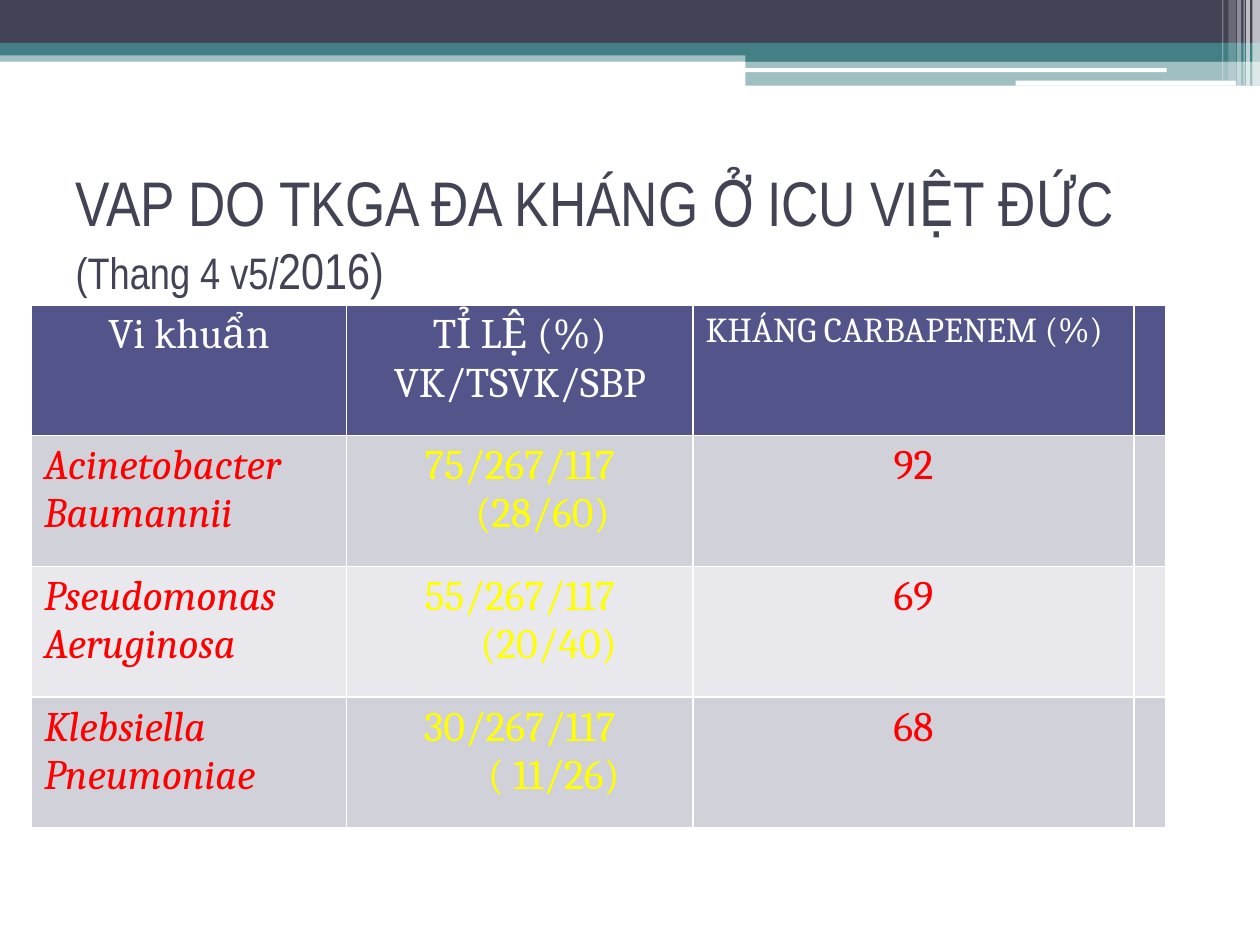
"""Build the slide on ventilator-associated pneumonia from resistant Gram-negative bacteria."""
import dataclasses

import lxml.etree
import pptx
import pptx.dml.color
import pptx.enum.shapes
import pptx.enum.text
import pptx.oxml.ns
import pptx.slide
import pptx.table
import pptx.util

Pt = pptx.util.Pt
ALIGN = pptx.enum.text.PP_ALIGN
SHAPE = pptx.enum.shapes.MSO_SHAPE
COLORS = {
    "ink": "424456", "teal": "438086", "white": "FFFFFF", "header": "53548A",
    "odd": "D1D1DA", "even": "E9E9ED", "red": "FF0000", "yellow": "FFFF00",
}


@dataclasses.dataclass(frozen=True)
class Band:
    left: float
    top: float
    width: float
    height: float
    color: str
    opacity: int = 100
    rounded: bool = False


@dataclasses.dataclass(frozen=True)
class CellText:
    lines: tuple[str, ...]
    color: str
    size: float = 24
    align: ALIGN = ALIGN.CENTER
    italic: bool = False
    last_indent: float = 0


@dataclasses.dataclass(frozen=True)
class Bacterium:
    name: str
    counts: str
    rates: str
    rates_indent: float
    resistance: str


BANDS = [
    Band(0, 28.8, 720, 6.5, "teal", 50),
    Band(0, 0, 720, 24.5, "ink"),
    Band(0, 24.5, 720, 7.2, "teal"),
    Band(426, 28, 294, 7.2, "teal"),
    Band(426, 34.6, 294, 14.4, "teal", 50),
    Band(425.5, 39, 241.2, 2.2, "white", rounded=True),
    Band(580.3, 46.1, 126, 2.9, "white", rounded=True),
    Band(715.7, 0, 4.3, 49, "white", 65),
    Band(712.1, 0, 2.2, 49, "white", 65),
    Band(710.6, 0, 0.7, 49, "white", 60),
    Band(707, 0, 2.2, 49, "white", 40),
    Band(702, 0, 4.3, 46.1, "white", 20),
    Band(698.4, 0, 0.7, 46.1, "white", 30),
]
TITLE_RUNS = [
    ("VAP DO TKGA ĐA KHÁNG Ở ICU VIỆT ĐỨC ", 36),
    ("(Thang 4 v5/", 25.2),
    ("2016)", 28.8),
]
HEADER = [
    CellText(("Vi khuẩn",), "white"),
    CellText(("TỈ LỆ (%)", "VK/TSVK/SBP"), "white"),
    CellText(("KHÁNG CARBAPENEM (%)",), "white", 20, ALIGN.LEFT),
]
BACTERIA = [
    Bacterium("Acinetobacter Baumannii", "75/267/117", "(28/60)", 26, "92"),
    Bacterium("Pseudomonas Aeruginosa", "55/267/117", "(20/40)", 33, "69"),
    Bacterium("Klebsiella Pneumoniae", "30/267/117", "( 11/26)", 39, "68"),
]
COLUMN_WIDTHS = [180, 198, 252, 18]
ROW_HEIGHT = 74.7


def rgb(name: str) -> pptx.dml.color.RGBColor:
    """Return the named colour."""
    return pptx.dml.color.RGBColor.from_string(COLORS[name])


def draw_band(slide: pptx.slide.Slide, band: Band) -> None:
    """Draw one bar of the top decoration."""
    kind = SHAPE.ROUNDED_RECTANGLE if band.rounded else SHAPE.RECTANGLE
    bar = slide.shapes.add_shape(
        kind, Pt(band.left), Pt(band.top), Pt(band.width), Pt(band.height))
    bar.shadow.inherit = False
    bar.fill.solid()
    bar.fill.fore_color.rgb = rgb(band.color)
    bar.line.fill.background()
    if band.opacity < 100:
        color = bar.fill._xPr.find(".//" + pptx.oxml.ns.qn("a:srgbClr"))
        lxml.etree.SubElement(
            color, pptx.oxml.ns.qn("a:alpha"), val=str(band.opacity * 1000))


def write_title(slide: pptx.slide.Slide) -> None:
    """Place and fill the title."""
    title = slide.shapes.title
    title.left, title.top, title.width, title.height = Pt(36), Pt(90), Pt(648), Pt(84.2)
    frame = title.text_frame
    frame.auto_size = pptx.enum.text.MSO_AUTO_SIZE.NONE
    frame.vertical_anchor = pptx.enum.text.MSO_ANCHOR.MIDDLE
    heading = frame.paragraphs[0]
    heading.alignment = ALIGN.LEFT
    for text, size in TITLE_RUNS:
        run = heading.add_run()
        run.text = text
        run.font.size = Pt(size)
        run.font.name = "Arial Narrow"
        run.font.color.rgb = rgb("ink")


def style_cell(cell: pptx.table._Cell, fill: str) -> None:
    """Give a cell thin white borders and a fill."""
    qn = pptx.oxml.ns.qn
    properties = cell._tc.get_or_add_tcPr()
    for side in ("a:lnL", "a:lnR", "a:lnT", "a:lnB"):
        border = lxml.etree.SubElement(properties, qn(side), w=str(Pt(1)))
        solid = lxml.etree.SubElement(border, qn("a:solidFill"))
        lxml.etree.SubElement(solid, qn("a:srgbClr"), val=COLORS["white"])
    cell.fill.solid()
    cell.fill.fore_color.rgb = rgb(fill)


def write_cell(cell: pptx.table._Cell, content: CellText) -> None:
    """Write the lines of a cell, one paragraph each."""
    frame = cell.text_frame
    frame.text = "\n".join(content.lines)
    for paragraph in frame.paragraphs:
        paragraph.alignment = content.align
        paragraph.font.size = Pt(content.size)
        paragraph.font.name = "Cambria"
        paragraph.font.italic = content.italic
        paragraph.font.color.rgb = rgb(content.color)
    if content.last_indent:
        last = frame.paragraphs[-1]._p.get_or_add_pPr()
        last.set("marL", str(Pt(content.last_indent)))


def bacterium_row(item: Bacterium) -> list[CellText]:
    """Lay out one bacterium as table cells."""
    return [
        CellText((item.name,), "red", align=ALIGN.LEFT, italic=True),
        CellText((item.counts, item.rates), "yellow", last_indent=item.rates_indent),
        CellText((item.resistance,), "red"),
    ]


def draw_table(slide: pptx.slide.Slide) -> None:
    """Draw the table of bacteria and resistance."""
    rows = [HEADER] + [bacterium_row(item) for item in BACTERIA]
    table = slide.shapes.add_table(
        len(rows), len(COLUMN_WIDTHS), Pt(18), Pt(174.2),
        Pt(sum(COLUMN_WIDTHS)), Pt(ROW_HEIGHT * len(rows))).table
    table.first_row = table.horz_banding = False
    for column, width in zip(table.columns, COLUMN_WIDTHS):
        column.width = Pt(width)
    for index, contents in enumerate(rows):
        table.rows[index].height = Pt(ROW_HEIGHT)
        fill = "header" if index == 0 else ("even", "odd")[index % 2]
        for cell in table.rows[index].cells:
            style_cell(cell, fill)
        for cell, content in zip(table.rows[index].cells, contents):
            write_cell(cell, content)


def main() -> None:
    """Build and save the presentation."""
    deck = pptx.Presentation()
    deck.slide_width, deck.slide_height = Pt(720), Pt(540)
    slide = deck.slides.add_slide(deck.slide_layouts.get_by_name("Title Only"))
    for band in BANDS:
        draw_band(slide, band)
    write_title(slide)
    draw_table(slide)
    deck.save("out.pptx")


if __name__ == "__main__":
    main()
